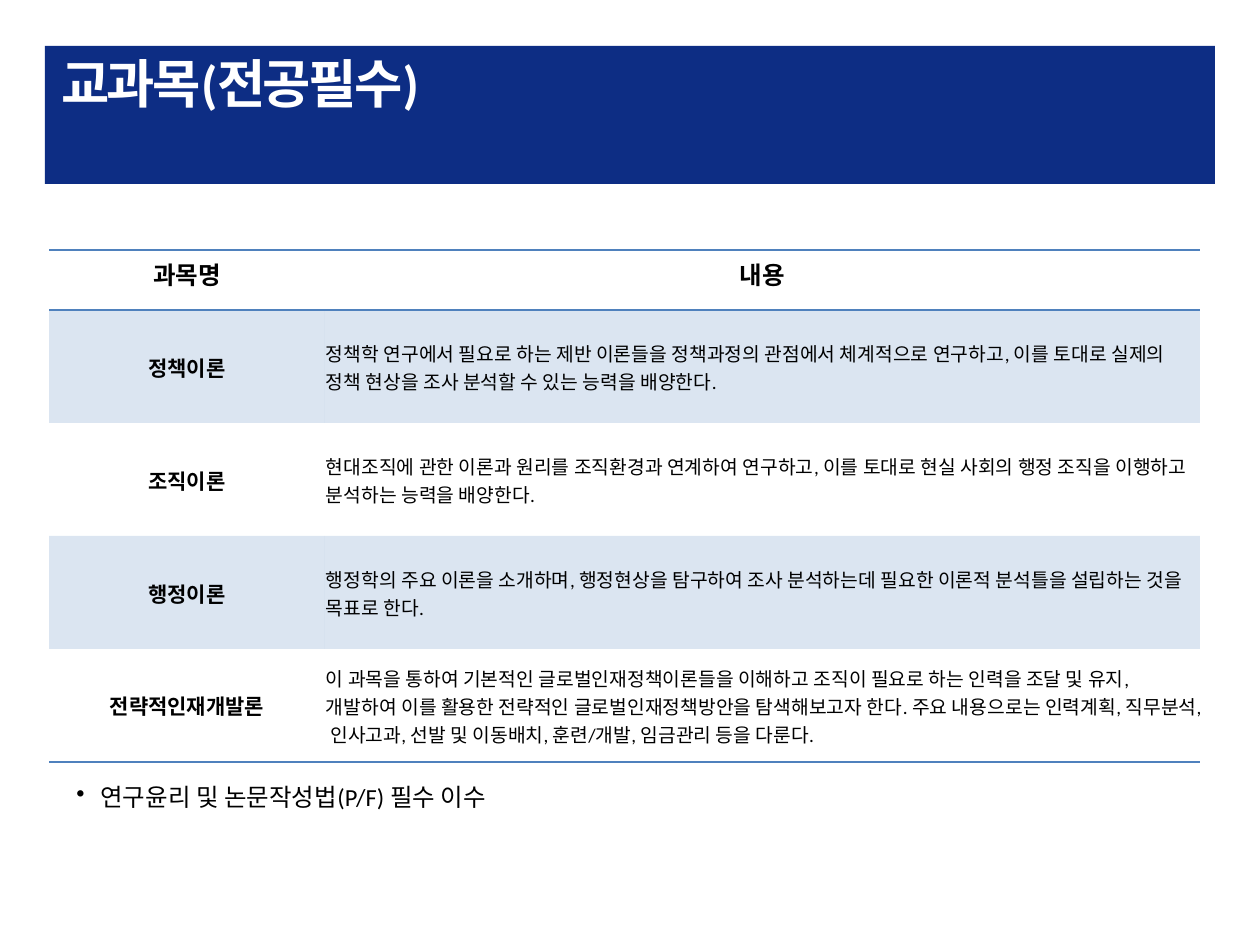
from dataclasses import dataclass

from lxml.etree import SubElement
from pptx import Presentation
from pptx.dml.color import RGBColor as RGB
from pptx.enum.shapes import MSO_SHAPE as Shape
from pptx.enum.text import MSO_ANCHOR as Anchor, PP_ALIGN as Align
from pptx.oxml.ns import qn
from pptx.util import Pt

EMU_PER_PX = 914400 / 126
NO_STYLE = "{2D5ABB26-0587-4C30-8999-92F81FD0307C}"


@dataclass(frozen=True)
class Theme:
    font: str = "Calibri"
    navy: str = "0D2D84"
    blue: str = "4F81BD"
    white: str = "FFFFFF"
    black: str = "000000"
    title: int = 30
    head: int = 14
    course: int = 12
    body: int = 11
    tint: int = 20


THEME = Theme()
HEADER = ("과목명", "내용")
COURSES = [
    ("정책이론", "정책학 연구에서 필요로 하는 제반 이론들을 정책과정의 관점에서 체계적으로 연구하고, "
     "이를 토대로 실제의 정책 현상을 조사 분석할 수 있는 능력을 배양한다."),
    ("조직이론", "현대조직에 관한 이론과 원리를 조직환경과 연계하여 연구하고, "
     "이를 토대로 현실 사회의 행정 조직을 이행하고 분석하는 능력을 배양한다."),
    ("행정이론", "행정학의 주요 이론을 소개하며, 행정현상을 탐구하여 조사 분석하는데 "
     "필요한 이론적 분석틀을 설립하는 것을 목표로 한다."),
    ("전략적인재개발론", "이 과목을 통하여 기본적인 글로벌인재정책이론들을 이해하고 조직이 필요로 하는 "
     "인력을 조달 및 유지, 개발하여 이를 활용한 전략적인 글로벌인재정책방안을 탐색해보고자 한다. "
     "주요 내용으로는 인력계획, 직무분석, 인사고과, 선발 및 이동배치, 훈련/개발, 임금관리 등을 다룬다."),
]


def px(n):
    return round(n * EMU_PER_PX)


def box(*lengths):
    return [px(n) for n in lengths]


def set_all(obj, values):
    for name, value in values.items():
        setattr(obj, name, value)


def write(p, text, size, color=THEME.black, bold=False):
    r = p.add_run()
    r.text = text
    set_all(r.font, {"name": THEME.font, "size": Pt(size), "bold": bold})
    r.font.color.rgb = RGB.from_string(color)
    return r


def add_band(slide, *at):
    sp = slide.shapes.add_shape(Shape.RECTANGLE, *box(*at))
    sp.shadow.inherit = False
    sp.fill.solid()
    sp.fill.fore_color.rgb = RGB.from_string(THEME.navy)
    sp.line.fill.background()


def add_paragraph_box(slide, at, spacing):
    """Add a wrapping text box and return its only paragraph."""
    tf = slide.shapes.add_textbox(*box(*at)).text_frame
    tf.word_wrap = True
    p = tf.paragraphs[0]
    p.line_spacing = spacing
    return p


def add_bullet(p, indent):
    pPr = p._p.get_or_add_pPr()
    pPr.set("marL", str(px(indent)))
    pPr.set("indent", str(-px(indent)))
    SubElement(pPr, qn("a:buChar"), char="•")


def add_border(cell, side):
    ln = SubElement(cell._tc.get_or_add_tcPr(), qn(f"a:ln{side}"), w=str(Pt(1)))
    fill = SubElement(ln, qn("a:solidFill"))
    SubElement(fill, qn("a:srgbClr"), val=THEME.blue)


def tint_cell(cell):
    cell.fill.solid()
    cell.fill.fore_color.rgb = RGB.from_string(THEME.blue)
    clr = cell._tc.tcPr.find(".//" + qn("a:srgbClr"))
    SubElement(clr, qn("a:alpha"), val=str(THEME.tint * 1000))


def fill_cell(cell, text, row, col, last):
    is_head = row == 0
    for side in "TB" if is_head else "B" if row == last else "":
        add_border(cell, side)
    if row % 2:
        tint_cell(cell)
    else:
        cell.fill.background()
    if not is_head:
        set_all(cell, {"vertical_anchor": Anchor.MIDDLE, "margin_left": px(1),
                       "margin_right": px(1), "margin_top": px(1), "margin_bottom": 0})
    is_label = is_head or col == 0
    p = cell.text_frame.paragraphs[0]
    p.alignment = Align.CENTER if is_label else Align.LEFT
    size = THEME.head if is_head else THEME.course if is_label else THEME.body
    write(p, text, size, bold=is_label)


def add_course_table(slide, left, top, widths, head_height, row_height):
    rows = [HEADER, *COURSES]
    heights = [head_height] + [row_height] * len(COURSES)
    frame = slide.shapes.add_table(
        len(rows), len(HEADER), *box(left, top, sum(widths), sum(heights)))
    table = frame.table
    set_all(table, {"first_row": False, "horz_banding": False})
    table._tbl.tblPr.find(qn("a:tableStyleId")).text = NO_STYLE
    for column, width in zip(table.columns, widths):
        column.width = px(width)
    for i, (texts, height) in enumerate(zip(rows, heights)):
        table.rows[i].height = px(height)
        for j, text in enumerate(texts):
            fill_cell(table.cell(i, j), text, i, j, len(COURSES))


def main():
    prs = Presentation()
    set_all(prs, {"slide_width": px(1260), "slide_height": px(945)})
    slide = prs.slides.add_slide(prs.slide_layouts[6])

    add_band(slide, 45, 46, 1170, 138)
    title = add_paragraph_box(slide, (49, 52, 1157, 133), 0.9)
    r = write(title, "교과목(전공필수)", THEME.title, THEME.white, bold=True)
    r._r.get_or_add_rPr().set("spc", "-150")

    add_course_table(slide, 49, 250, (276, 875), 60, 113)

    note = add_paragraph_box(slide, (64, 781, 442, 43), 0.82)
    add_bullet(note, 24)
    write(note, "연구윤리 및 논문작성법(P/F) 필수 이수", THEME.head)
    prs.save("out.pptx")


if __name__ == "__main__":
    main()
